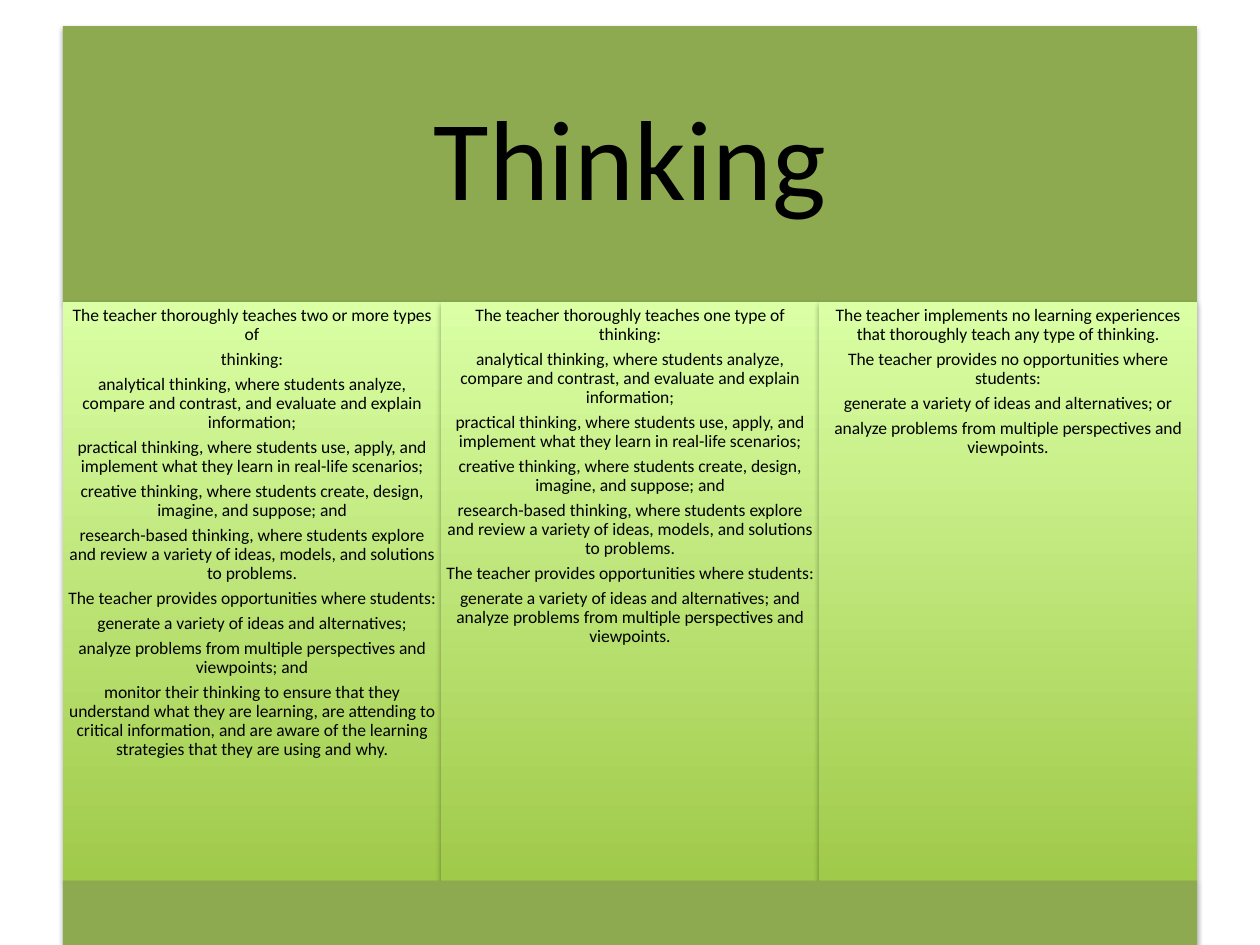
from dataclasses import dataclass

from lxml import etree
from pptx import Presentation
from pptx.dml.color import RGBColor
from pptx.enum.shapes import MSO_SHAPE
from pptx.enum.text import MSO_ANCHOR, PP_ALIGN
from pptx.oxml.ns import qn
from pptx.util import Pt

RECTANGLE = MSO_SHAPE.RECTANGLE
TOP, MIDDLE = MSO_ANCHOR.TOP, MSO_ANCHOR.MIDDLE
CENTER = PP_ALIGN.CENTER


@dataclass(frozen=True)
class Theme:
    font: str = "Calibri"
    ink: str = "000000"
    band: str = "8DAA51"
    level_bottom: str = "A0CA4A"
    level_top: str = "DAFFA5"
    shadow: str = "000000"
    title_size: float = 65
    level_size: float = 10


@dataclass(frozen=True)
class Box:
    left: float
    top: float
    width: float
    height: float


THEME = Theme()
LEFT, WIDTH = 36, 648
TITLE_BAND = Box(LEFT, 15, WIDTH, 157.5)
LEVELS_TOP, LEVELS_HEIGHT = 172.5, 330.75
FOOTER_BAND = Box(LEFT, 503.25, WIDTH, 36.75)

THINKING_TYPES = (
    "analytical thinking, where students analyze, compare and contrast, and evaluate and explain information;",
    "practical thinking, where students use, apply, and implement what they learn in real-life scenarios;",
    "creative thinking, where students create, design, imagine, and suppose; and",
    "research-based thinking, where students explore and review a variety of ideas, models, and solutions to problems.",
)
OPPORTUNITIES = "The teacher provides opportunities where students:"
IDEAS = "generate a variety of ideas and alternatives;"
PROBLEMS = "analyze problems from multiple perspectives and viewpoints"

LEVELS = (
    (
        "The teacher thoroughly teaches two or more types of",
        "thinking:",
        *THINKING_TYPES,
        OPPORTUNITIES,
        IDEAS,
        f"{PROBLEMS}; and",
        "monitor their thinking to ensure that they understand what they are learning, are attending to "
        "critical information, and are aware of the learning strategies that they are using and why.",
    ),
    (
        "The teacher thoroughly teaches one type of thinking:",
        *THINKING_TYPES,
        OPPORTUNITIES,
        f"{IDEAS} and {PROBLEMS}.",
    ),
    (
        "The teacher implements no learning experiences that thoroughly teach any type of thinking.",
        "The teacher provides no opportunities where students:",
        f"{IDEAS} or",
        f"{PROBLEMS}.",
    ),
)


def add_shadow(panel) -> None:
    panel.shadow.inherit = False
    effects = panel._element.spPr.find(qn("a:effectLst"))
    outer = etree.SubElement(
        effects, qn("a:outerShdw"), blurRad=str(Pt(3.1)), dist=str(Pt(1.8)),
        dir=str(90 * 60000), rotWithShape="0",
    )
    color = etree.SubElement(outer, qn("a:srgbClr"), val=THEME.shadow)
    etree.SubElement(color, qn("a:alpha"), val="35000")


def add_panel(slide, box: Box, *colors: str):
    panel = slide.shapes.add_shape(
        RECTANGLE, Pt(box.left), Pt(box.top), Pt(box.width), Pt(box.height)
    )
    if len(colors) == 1:
        panel.fill.solid()
        panel.fill.fore_color.rgb = RGBColor.from_string(colors[0])
    else:
        panel.fill.gradient()
        panel.fill.gradient_angle = 90
        for stop, color in zip(panel.fill.gradient_stops, colors):
            stop.color.rgb = RGBColor.from_string(color)
    panel.line.fill.background()
    add_shadow(panel)
    return panel


def write(panel, paragraphs: tuple[str, ...], *, size: float, inset: float, anchor=TOP) -> None:
    frame = panel.text_frame
    frame.word_wrap = True
    frame.vertical_anchor = anchor
    frame.margin_left = frame.margin_right = Pt(inset)
    frame.margin_top = frame.margin_bottom = Pt(inset)
    frame.text = "\n".join(paragraphs)
    for paragraph in frame.paragraphs:
        paragraph.alignment = CENTER
        paragraph.line_spacing = 0.9
        paragraph.space_after = Pt(size * 0.35)
        for run in paragraph.runs:
            run.font.name = THEME.font
            run.font.size = Pt(size)
            run.font.color.rgb = RGBColor.from_string(THEME.ink)


def main() -> None:
    deck = Presentation()
    deck.slide_width, deck.slide_height = Pt(720), Pt(540)
    slide = deck.slides.add_slide(deck.slide_layouts[6])

    title = add_panel(slide, TITLE_BAND, THEME.band)
    write(title, ("Thinking",), size=THEME.title_size, inset=19.5, anchor=MIDDLE)

    level_width = WIDTH / len(LEVELS)
    for column, criteria in enumerate(LEVELS):
        box = Box(LEFT + column * level_width, LEVELS_TOP, level_width, LEVELS_HEIGHT)
        level = add_panel(slide, box, THEME.level_bottom, THEME.level_top)
        write(level, criteria, size=THEME.level_size, inset=2.8)

    add_panel(slide, FOOTER_BAND, THEME.band)
    deck.save("out.pptx")


if __name__ == "__main__":
    main()
